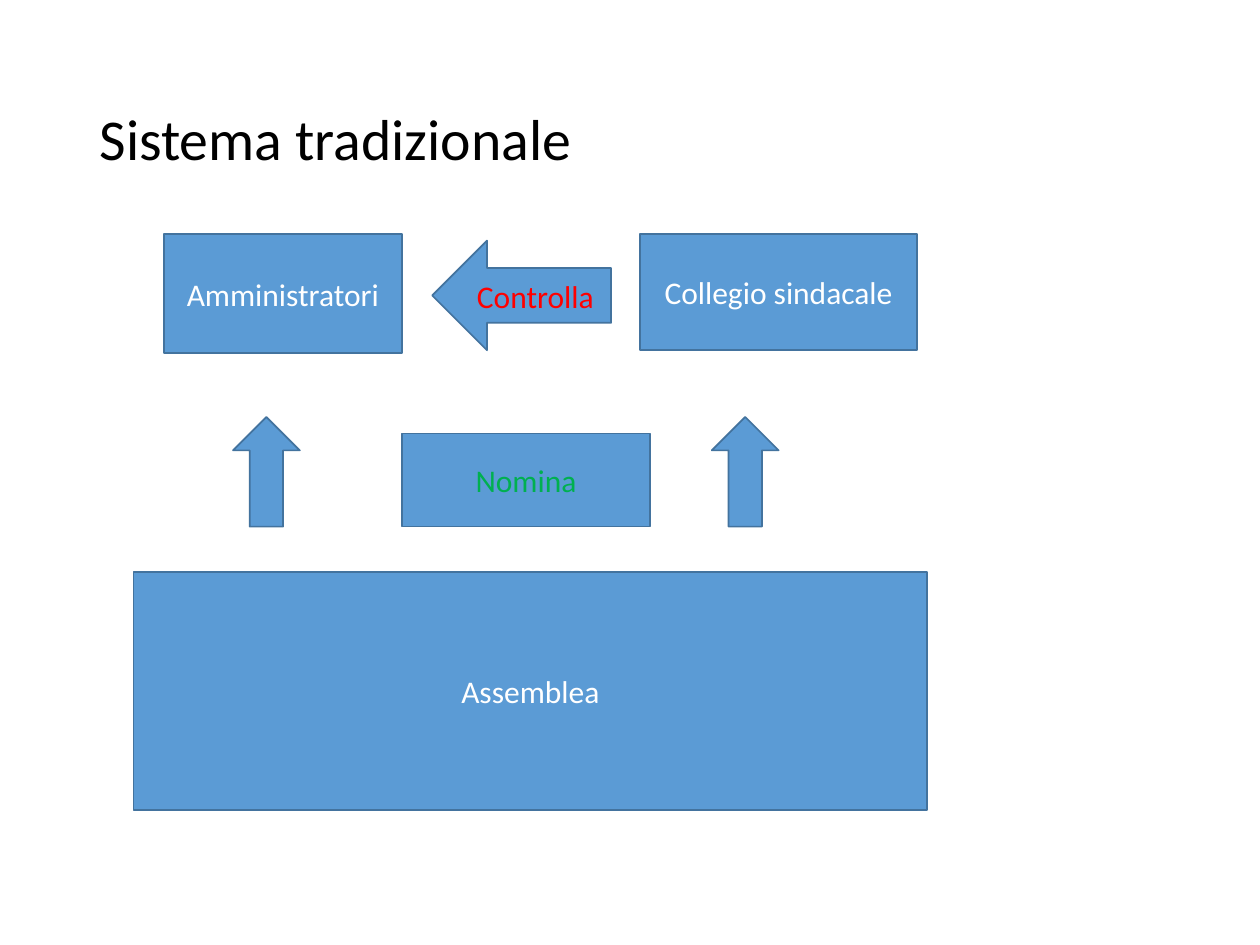
from pptx import Presentation, util as u
from pptx.dml.color import RGBColor
from pptx.enum import shapes, text

COLS, ROWS = 100, 75
WIDTH, HEIGHT = u.Inches(10), u.Inches(7.5)
KIND = shapes.MSO_SHAPE
BLUE, EDGE, WHITE = "5B9BD5", "43739E", "FFFFFF"
RED, GREEN, BLACK = "FF0000", "00B050", "000000"


def tint(form, color):
    """Set a solid colour on a fill, or a colour on a font."""
    if hasattr(form, "solid"):
        form.solid()
        form = form.fore_color
    else:
        form = form.color
    form.rgb = RGBColor.from_string(color)


def area(col, row, wide, high):
    """Turn grid columns and rows into slide lengths."""
    return [u.Emu(round(n * full / part)) for n, full, part in (
        (col, WIDTH, COLS), (row, HEIGHT, ROWS),
        (wide, WIDTH, COLS), (high, HEIGHT, ROWS))]


def write(shape, words, size=18, color=WHITE, align=text.PP_ALIGN.CENTER, space=1.0):
    """Put one formatted paragraph in a shape."""
    frame = shape.text_frame
    frame.word_wrap = True
    frame.auto_size = text.MSO_AUTO_SIZE.NONE
    frame.vertical_anchor = text.MSO_ANCHOR.MIDDLE
    para = frame.paragraphs[0]
    para.alignment = align
    para.line_spacing = space
    run = para.add_run()
    run.text = words
    run.font.name = "Calibri"
    run.font.size = u.Pt(size)
    tint(run.font, color)


def head(slide, words, place):
    """Place and fill the title."""
    title = slide.shapes.title
    title.left, title.top, title.width, title.height = area(*place)
    write(title, words, size=33, color=BLACK, align=text.PP_ALIGN.LEFT, space=0.9)


def block(slide, kind, place, words="", **style):
    """Draw a blue shape with optional text."""
    shape = slide.shapes.add_shape(kind, *area(*place))
    shape.shadow.inherit = False
    tint(shape.fill, BLUE)
    tint(shape.line.fill, EDGE)
    shape.line.width = u.Pt(1)
    if words:
        write(shape, words, **style)


def main():
    """Build the slide on the traditional system."""
    deck = Presentation()
    deck.slide_width, deck.slide_height = WIDTH, HEIGHT
    slide = deck.slides.add_slide(deck.slide_layouts[5])
    head(slide, "Sistema tradizionale", (6.9, 4, 86.2, 14.5))
    block(slide, KIND.RECTANGLE, (13, 18.6, 18.9, 9.4), "Amministratori")
    block(slide, KIND.RECTANGLE, (50.8, 18.6, 22, 9.2), "Collegio sindacale")
    block(slide, KIND.LEFT_ARROW, (34.3, 19.1, 14.2, 8.7), "Controlla", color=RED)
    block(slide, KIND.RECTANGLE, (10.6, 45.4, 63, 18.9), "Assemblea")
    for col in (18.5, 56.5):
        block(slide, KIND.UP_ARROW, (col, 33.1, 5.3, 8.7))
    block(slide, KIND.RECTANGLE, (31.9, 34.4, 19.7, 7.4), "Nomina", color=GREEN)
    deck.save("out.pptx")


if __name__ == "__main__":
    main()
